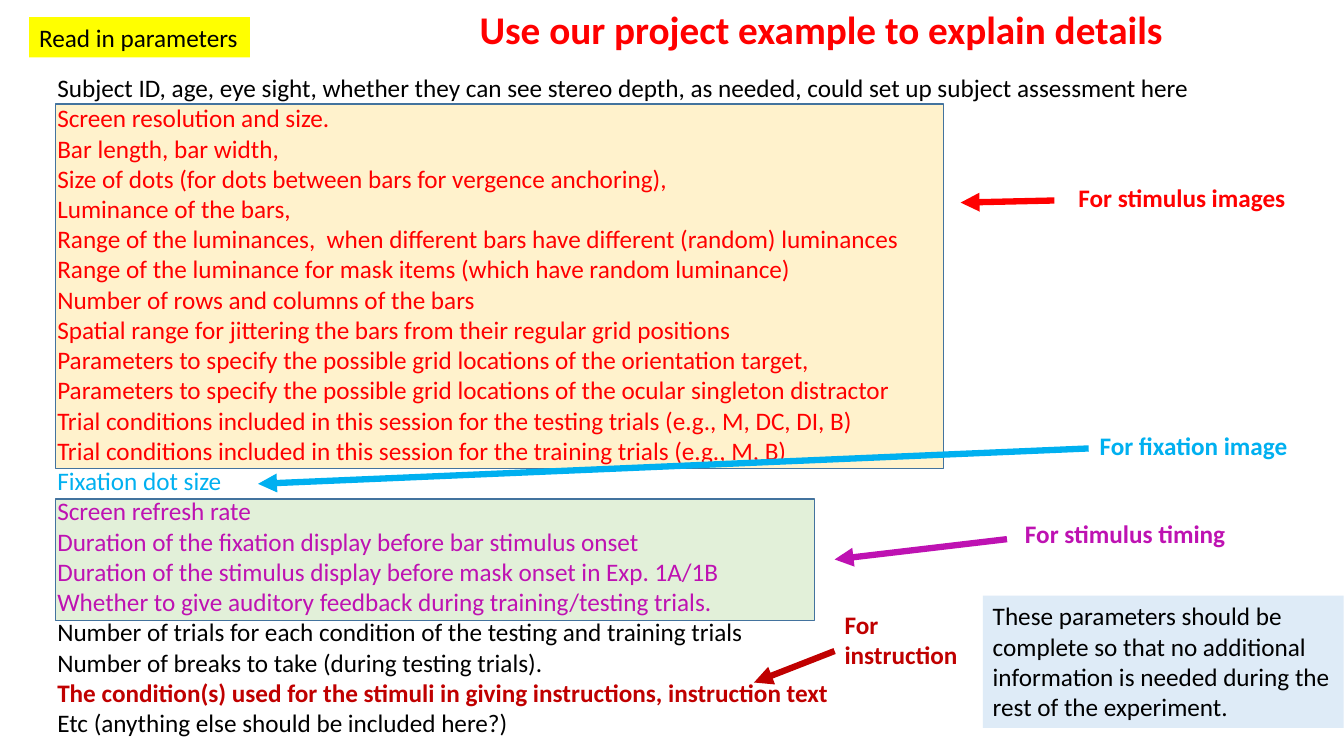
from lxml import etree
from pptx import Presentation
from pptx.dml.color import RGBColor
from pptx.enum.shapes import MSO_CONNECTOR, MSO_SHAPE
from pptx.enum.text import MSO_AUTO_SIZE
from pptx.oxml.ns import qn
from pptx.util import Inches, Pt

RECT = MSO_SHAPE.RECTANGLE
STRAIGHT = MSO_CONNECTOR.STRAIGHT
FIT_SHAPE = MSO_AUTO_SIZE.SHAPE_TO_FIT_TEXT

COLS, ROWS = 40, 25
BLACK, RED, BLUE, PURPLE, MAROON = "000000", "FF0000", "00B0F0", "BE12B2", "C00000"
FIRST_LINE, LINE_PITCH = 2.43, 1.005
PANEL_LEFT = 1.65

SECTIONS = [
    (BLACK, False, None, [
        "Subject ID, age, eye sight, whether they can see stereo depth, as needed, could set up subject assessment here",
    ]),
    (RED, False, (26.43, "FFF2CC"), [
        "Screen resolution and size.",
        "Bar length, bar width,",
        "Size of dots (for dots between bars for vergence anchoring),",
        "Luminance of the bars,",
        "Range of the luminances,  when different bars have different (random) luminances",
        "Range of the luminance for mask items (which have random luminance)",
        "Number of rows and columns of the bars",
        "Spatial range for jittering the bars from their regular grid positions",
        "Parameters to specify the possible grid locations of the orientation target,",
        "Parameters to specify the possible grid locations of the ocular singleton distractor",
        "Trial conditions included in this session for the testing trials (e.g., M, DC, DI, B)",
        "Trial conditions included in this session for the training trials (e.g., M, B)",
    ]),
    (BLUE, False, None, ["Fixation dot size"]),
    (PURPLE, False, (22.59, "E2F0D9"), [
        "Screen refresh rate",
        "Duration of the fixation display before bar stimulus onset",
        "Duration of the stimulus display before mask onset in Exp. 1A/1B",
        "Whether to give auditory feedback during training/testing trials.",
    ]),
    (BLACK, False, None, [
        "Number of trials for each condition of the testing and training trials",
        "Number of breaks to take (during testing trials).",
    ]),
    (MAROON, True, None, [
        "The condition(s) used for the stimuli in giving instructions, instruction text",
    ]),
    (BLACK, False, None, ["Etc (anything else should be included here?)"]),
]

CALLOUTS = [
    ("For stimulus images", RED, (31.8, 5.87, 6.99, 1.33), (31.38, 6.63, 28.59, 6.7)),
    ("For stimulus timing", PURPLE, (30.21, 16.97, 6.78, 1.33), (29.97, 17.83, 24.84, 18.5)),
    ("For fixation image", BLUE, (32.43, 14.07, 6.24, 1.33), (32.4, 14.83, 7.68, 16)),
    ("For instruction", MAROON, (24.84, 19.97, 4.41, 2.37), (24.84, 21.53, 22.44, 22.57)),
]


def rgb(value):
    return RGBColor.from_string(value)


class Deck:
    font = "Calibri"
    size = 18
    outline = "43739E"

    def __init__(self):
        self.prs = Presentation()
        self.prs.slide_width = Inches(13.33)
        self.prs.slide_height = Inches(7.5)
        self.s = self.prs.slides.add_slide(self.prs.slide_layouts[6])

    def place(self, box):
        col = self.prs.slide_width / COLS
        row = self.prs.slide_height / ROWS
        x, y, w, h = box
        return round(x * col), round(y * row), round(w * col), round(h * row)

    def panel(self, box, fill):
        sp = self.s.shapes.add_shape(RECT, *self.place(box))
        sp.shadow.inherit = False
        sp.fill.solid()
        sp.fill.fore_color.rgb = rgb(fill)
        sp.line.color.rgb = rgb(self.outline)
        sp.line.width = Pt(1)

    def text(self, box, lines, size=None, fill=None, wrap=False):
        sp = self.s.shapes.add_textbox(*self.place(box))
        if fill:
            sp.fill.solid()
            sp.fill.fore_color.rgb = rgb(fill)
        tf = sp.text_frame
        tf.text = "\n".join(line for line, _, _ in lines)
        tf.word_wrap = wrap
        tf.auto_size = FIT_SHAPE
        for p, (_, color, bold) in zip(tf.paragraphs, lines):
            for r in p.runs:
                r.font.name = self.font
                r.font.size = Pt(size or self.size)
                r.font.bold = bold
                r.font.color.rgb = rgb(color)

    def arrow(self, ends, color):
        c = self.s.shapes.add_connector(STRAIGHT, *self.place(ends))
        c.line.color.rgb = rgb(color)
        c.line.width = Pt(4.5)
        etree.SubElement(c.line._get_or_add_ln(), qn("a:tailEnd"), type="triangle")
        etree.SubElement(c._element.spPr, qn("a:effectLst"))


def main():
    deck = Deck()
    lines = []
    for color, bold, panel, section in SECTIONS:
        if panel:
            width, fill = panel
            top = FIRST_LINE + len(lines) * LINE_PITCH
            deck.panel((PANEL_LEFT, top, width, len(section) * LINE_PITCH), fill)
        lines += [(line, color, bold) for line in section]

    deck.text((13.98, 0, 21.18, 1.9),
              [("Use our project example to explain details", RED, True)], size=28)
    deck.text((0.87, 0.57, 6.57, 1.33), [("Read in parameters", BLACK, False)], fill="FFFF00")
    deck.text((1.41, 2.23, 34.71, 22.57), lines)
    note = ("These parameters should be complete so that no additional information "
            "is needed during the rest of the experiment.")
    deck.text((29.25, 19.7, 10.74, 4.37), [(note, BLACK, False)], fill="DEEBF7", wrap=True)
    for label, color, box, ends in CALLOUTS:
        deck.text(box, [(label, color, True)], wrap=True)
        deck.arrow(ends, color)
    deck.prs.save("out.pptx")


if __name__ == "__main__":
    main()
